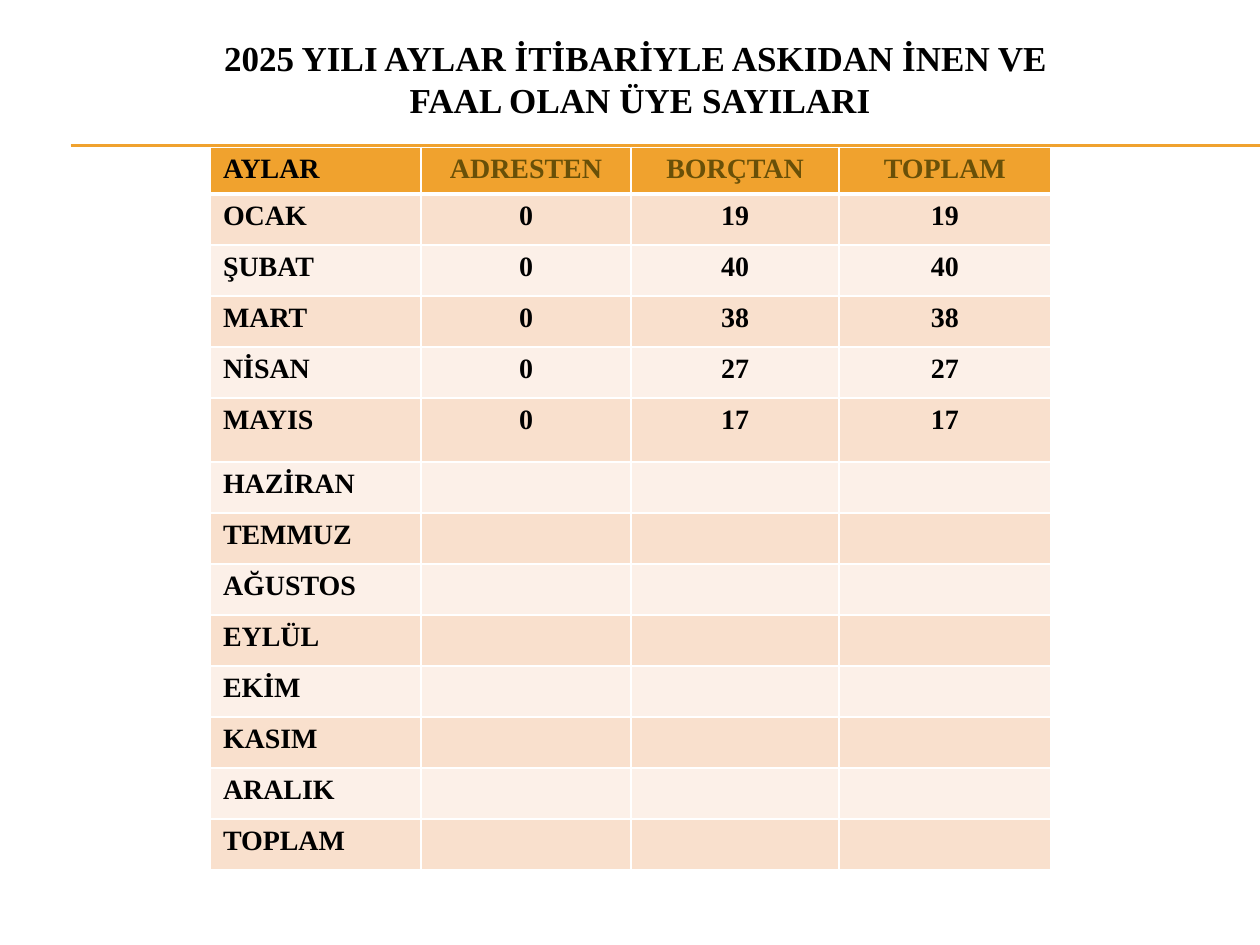
from lxml import etree
from pptx import Presentation
from pptx.dml.color import RGBColor
from pptx.enum.shapes import MSO_CONNECTOR
from pptx.enum.text import MSO_ANCHOR, PP_ALIGN
from pptx.oxml.ns import qn
from pptx.util import Inches, Pt

LEFT, CENTER = PP_ALIGN.LEFT, PP_ALIGN.CENTER
MIDDLE = MSO_ANCHOR.MIDDLE
STRAIGHT = MSO_CONNECTOR.STRAIGHT

BLACK = RGBColor(0x00, 0x00, 0x00)
WHITE = RGBColor(0xFF, 0xFF, 0xFF)
ORANGE = RGBColor(0xF0, 0xA2, 0x2E)
OLIVE = RGBColor(0x69, 0x50, 0x08)
BANDS = RGBColor(0xFC, 0xF0, 0xE8), RGBColor(0xF9, 0xE0, 0xCD)

# Content
TITLE = "2025 YILI AYLAR İTİBARİYLE ASKIDAN İNEN VE \vFAAL OLAN ÜYE SAYILARI"
ROWS = [
    ("AYLAR", "ADRESTEN", "BORÇTAN", "TOPLAM"),
    ("OCAK", 0, 19, 19),
    ("ŞUBAT", 0, 40, 40),
    ("MART", 0, 38, 38),
    ("NİSAN", 0, 27, 27),
    ("MAYIS", 0, 17, 17),
    ("HAZİRAN",),
    ("TEMMUZ",),
    ("AĞUSTOS",),
    ("EYLÜL",),
    ("EKİM",),
    ("KASIM",),
    ("ARALIK",),
    ("TOPLAM",),
]

# Layout in inches
WIDTHS = [1.67, 1.67, 1.65, 1.68]
TABLE_X, TABLE_Y, TABLE_H = 1.67, 1.17, 5.74
TALL = {0: 0.37, 5: 0.51}  # rows with a height of their own
ROW_H = (TABLE_H - sum(TALL.values())) / (len(ROWS) - len(TALL))


def write(frame, text, size, color, align):
    frame.text = str(text)
    style = {"name": "Times New Roman", "size": Pt(size), "bold": True}
    for para in frame.paragraphs:
        para.alignment = align
        for run in para.runs:
            for key, value in style.items():
                setattr(run.font, key, value)
            run.font.color.rgb = color


def border(cell, widths):
    """Draw white edges; widths maps an edge letter to points."""
    props = cell._tc.get_or_add_tcPr()
    for spot, (edge, width) in enumerate(widths.items()):
        line = etree.Element(qn("a:ln" + edge), w=str(Pt(width)))
        fill = etree.SubElement(line, qn("a:solidFill"))
        etree.SubElement(fill, qn("a:srgbClr"), val=str(WHITE))
        props.insert(spot, line)


deck = Presentation()
deck.slide_width, deck.slide_height = Inches(10), Inches(7.5)
slide = deck.slides.add_slide(deck.slide_layouts[6])
shapes = slide.shapes

# Double rule under the title
for y in (1.15, 1.16):
    rule = shapes.add_connector(STRAIGHT, Inches(0.56), Inches(y), Inches(10), Inches(y))
    rule.line.color.rgb = ORANGE
    rule.line.width = Pt(0.75)
    etree.SubElement(rule._element.spPr, qn("a:effectLst"))

# Title
title = shapes.add_textbox(Inches(0.33), Inches(0.16), Inches(9.5), Inches(0.92))
frame = title.text_frame
frame.word_wrap = True
frame.vertical_anchor = MIDDLE
write(frame, TITLE, 20, BLACK, CENTER)

# Table of months
table = shapes.add_table(
    len(ROWS), len(WIDTHS), Inches(TABLE_X), Inches(TABLE_Y),
    Inches(sum(WIDTHS)), Inches(TABLE_H),
).table
for col, width in zip(table.columns, WIDTHS):
    col.width = Inches(width)

for r, row in enumerate(ROWS):
    table.rows[r].height = Inches(TALL.get(r, ROW_H))
    edges = {"L": 1, "R": 1, "T": 3 if r == 1 else 1, "B": 3 if r == 0 else 1}
    for c in range(len(WIDTHS)):
        cell = table.cell(r, c)
        cell.fill.solid()
        cell.fill.fore_color.rgb = BANDS[r % 2] if r else ORANGE
        border(cell, edges)
        if c < len(row):
            color = OLIVE if r == 0 and c else BLACK
            write(cell.text_frame, row[c], 16, color, CENTER if c else LEFT)

deck.save("out.pptx")
